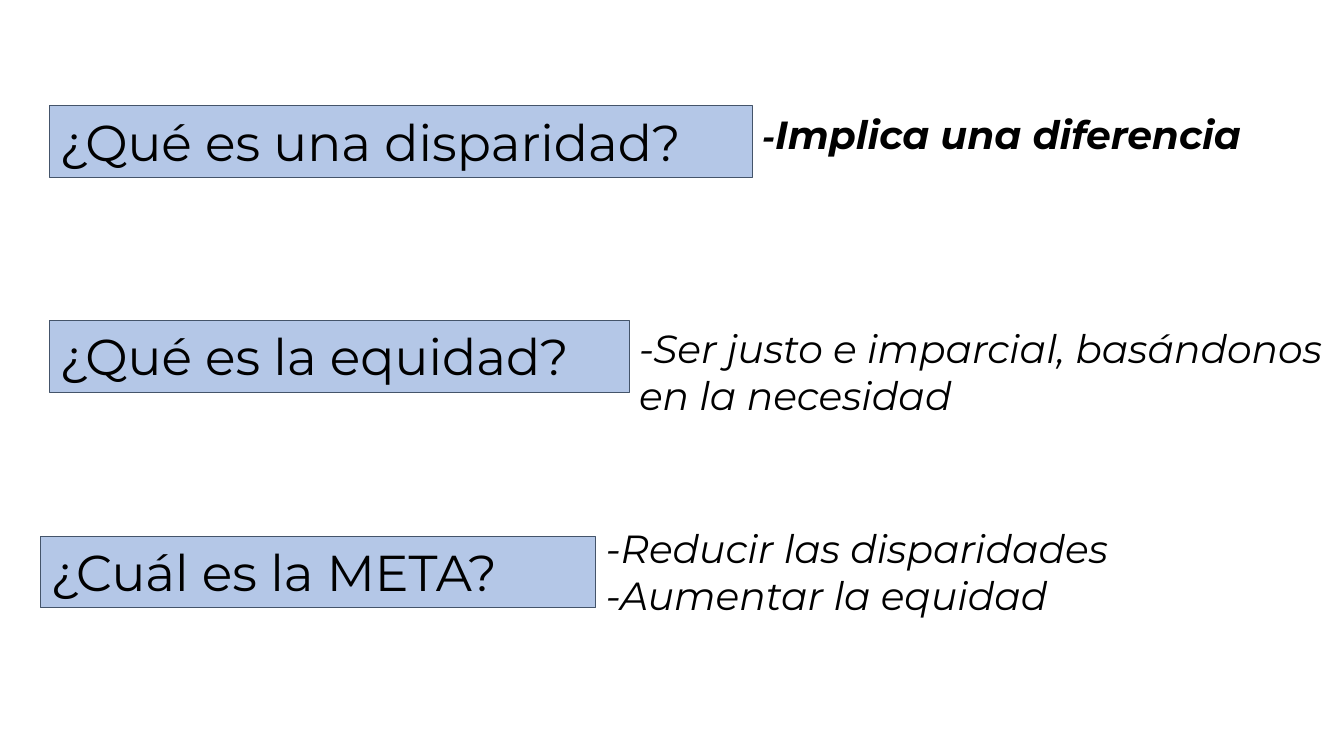
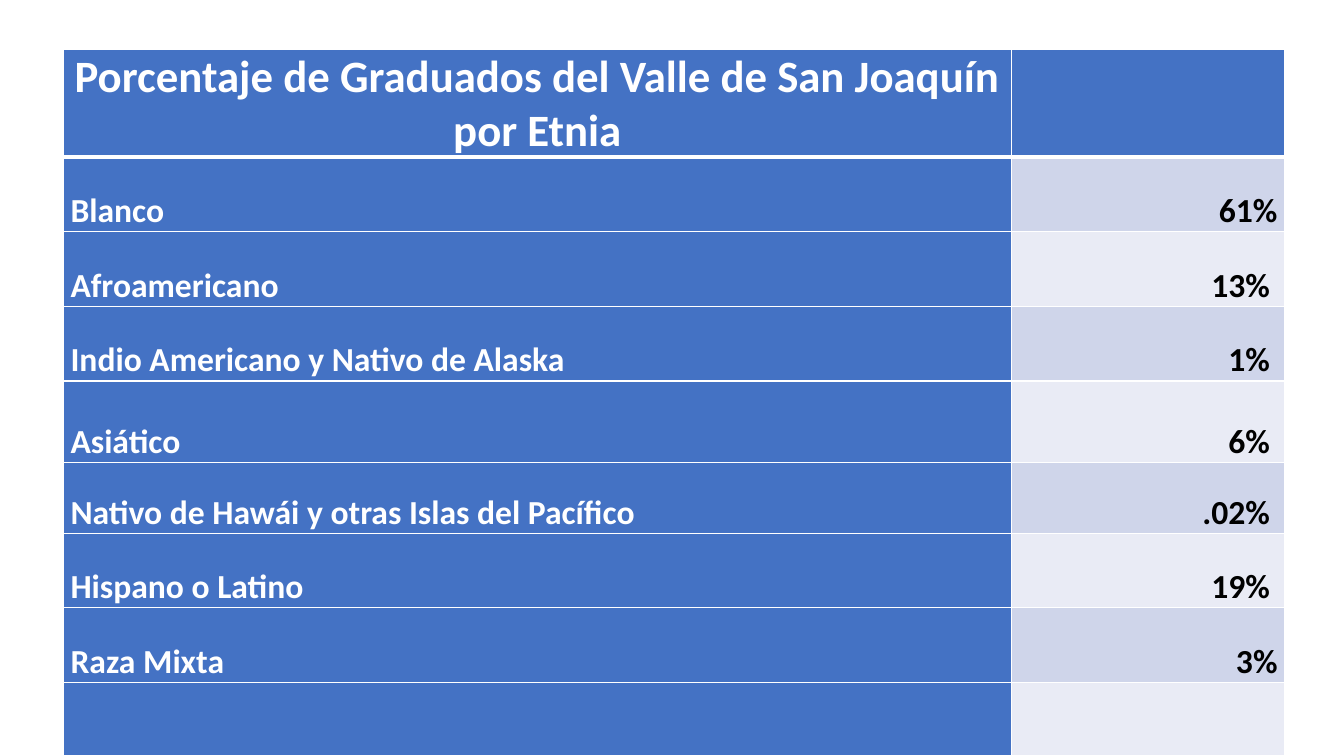
from lxml import etree
from pptx import Presentation
from pptx.dml.color import RGBColor
from pptx.enum.shapes import MSO_SHAPE
from pptx.enum.text import MSO_ANCHOR, MSO_AUTO_SIZE, PP_ALIGN
from pptx.oxml.ns import qn
from pptx.util import Inches, Pt

RECTANGLE = MSO_SHAPE.RECTANGLE
TOP, BOTTOM = MSO_ANCHOR.TOP, MSO_ANCHOR.BOTTOM
GROW = MSO_AUTO_SIZE.SHAPE_TO_FIT_TEXT
LEFT, CENTER, RIGHT = PP_ALIGN.LEFT, PP_ALIGN.CENTER, PP_ALIGN.RIGHT

COLORS = {
    "text": "000000",
    "white": "FFFFFF",
    "question": "B4C7E7",
    "outline": "44546A",
    "header": "4472C4",
    "band_dark": "CFD5EA",
    "band_light": "E9EBF5",
}
QUESTION_FONT = "Montserrat"
TABLE_FONT = "Calibri"

QUESTIONS = [
    {"text": "¿Qué es una disparidad?", "box": (0.49, 1.05, 6.97),
     "answer": [[("-", 24), ("Implica una diferencia", 28)]],
     "answer_box": (1.05, 5.14, 0.57), "bold": True},
    {"text": "¿Qué es la equidad?", "box": (0.49, 3.18, 5.75),
     "answer": [[("-Ser justo e imparcial, basándonos en la necesidad", 28)]],
     "answer_box": (3.17, 7.09, 1.04), "bold": False},
    {"text": "¿Cuál es la META?", "box": (0.4, 5.32, 5.51),
     "answer": [[("-Reducir las disparidades", 28)], [("-Aumentar la equidad", 28)]],
     "answer_box": (5.15, 5.85, 1.04), "bold": False},
]
QUESTION_HEIGHT = 0.71

TABLE_ROWS = [
    ("Porcentaje de Graduados del Valle de San Joaquín por Etnia", "", 1.07),
    ("Blanco", "61%", 0.74),
    ("Afroamericano", "13% ", 0.74),
    ("Indio Americano y Nativo de Alaska", "1% ", 0.74),
    ("Asiático", "6% ", 0.81),
    ("Nativo de Hawái y otras Islas del Pacífico", ".02% ", 0.7),
    ("Hispano o Latino", "19% ", 0.74),
    ("Raza Mixta", "3%", 0.74),
    ("", "", 0.73),
]
TABLE_COLUMNS = (9.4, 2.71)
TABLE_LEFT, TABLE_TOP = 0.63, 0.49


def color(name):
    return RGBColor.from_string(COLORS[name])


def write_text(paragraph, text, *, size, font, fill="text", bold=False,
               italic=False, align=LEFT):
    paragraph.alignment = align
    run = paragraph.add_run()
    run.text = text
    run.font.size = Pt(size)
    run.font.name = font
    run.font.bold = bold
    run.font.italic = italic
    run.font.color.rgb = color(fill)


def prepare_frame(shape):
    frame = shape.text_frame
    frame.word_wrap = True
    frame.auto_size = GROW
    frame.vertical_anchor = TOP
    return frame


def add_question(slide, question):
    left, top, width = question["box"]
    shape = slide.shapes.add_shape(
        RECTANGLE, Inches(left), Inches(top), Inches(width), Inches(QUESTION_HEIGHT))
    shape.shadow.inherit = False
    shape.fill.solid()
    shape.fill.fore_color.rgb = color("question")
    shape.line.color.rgb = color("outline")
    shape.line.width = Pt(0.75)
    write_text(prepare_frame(shape).paragraphs[0], question["text"],
               size=36, font=QUESTION_FONT)

    answer_top, answer_width, answer_height = question["answer_box"]
    answer = slide.shapes.add_textbox(
        Inches(left + width), Inches(answer_top),
        Inches(answer_width), Inches(answer_height))
    frame = prepare_frame(answer)
    for index, runs in enumerate(question["answer"]):
        paragraph = frame.add_paragraph() if index else frame.paragraphs[0]
        for text, size in runs:
            write_text(paragraph, text, size=size, font=QUESTION_FONT,
                       bold=question["bold"], italic=True)


def set_borders(cell, top, bottom):
    properties = cell._tc.get_or_add_tcPr()
    for tag, width in (("a:lnL", 1), ("a:lnR", 1), ("a:lnT", top), ("a:lnB", bottom)):
        line = etree.SubElement(properties, qn(tag), w=str(Pt(width)))
        solid = etree.SubElement(line, qn("a:solidFill"))
        etree.SubElement(solid, qn("a:srgbClr"), val=COLORS["white"])


def format_cell(cell, row, column):
    set_borders(cell, top=3 if row == 1 else 1, bottom=3 if row == 0 else 1)
    band = "band_dark" if row % 2 else "band_light"
    cell.fill.solid()
    cell.fill.fore_color.rgb = color("header" if row == 0 or column == 0 else band)
    cell.vertical_anchor = BOTTOM
    cell.margin_left = cell.margin_right = Inches(0.07)
    cell.margin_top = cell.margin_bottom = 0


def add_graduates_table(slide):
    heights = [row[-1] for row in TABLE_ROWS]
    table = slide.shapes.add_table(
        len(TABLE_ROWS), len(TABLE_COLUMNS), Inches(TABLE_LEFT), Inches(TABLE_TOP),
        Inches(sum(TABLE_COLUMNS)), Inches(sum(heights))).table
    for column, width in enumerate(TABLE_COLUMNS):
        table.columns[column].width = Inches(width)
    for row, (label, value, height) in enumerate(TABLE_ROWS):
        table.rows[row].height = Inches(height)
        for column, text in enumerate((label, value)):
            cell = table.cell(row, column)
            format_cell(cell, row, column)
            if text:
                align = CENTER if row == 0 else (LEFT, RIGHT)[column]
                write_text(cell.text_frame.paragraphs[0], text,
                           size=24 if row else 32, font=TABLE_FONT, bold=True,
                           fill="text" if column else "white", align=align)


def main():
    presentation = Presentation()
    presentation.slide_width = Inches(13.33)
    presentation.slide_height = Inches(7.5)
    blank_layout = presentation.slide_layouts[6]

    questions_slide = presentation.slides.add_slide(blank_layout)
    for question in QUESTIONS:
        add_question(questions_slide, question)

    add_graduates_table(presentation.slides.add_slide(blank_layout))
    presentation.save("out.pptx")


if __name__ == "__main__":
    main()
